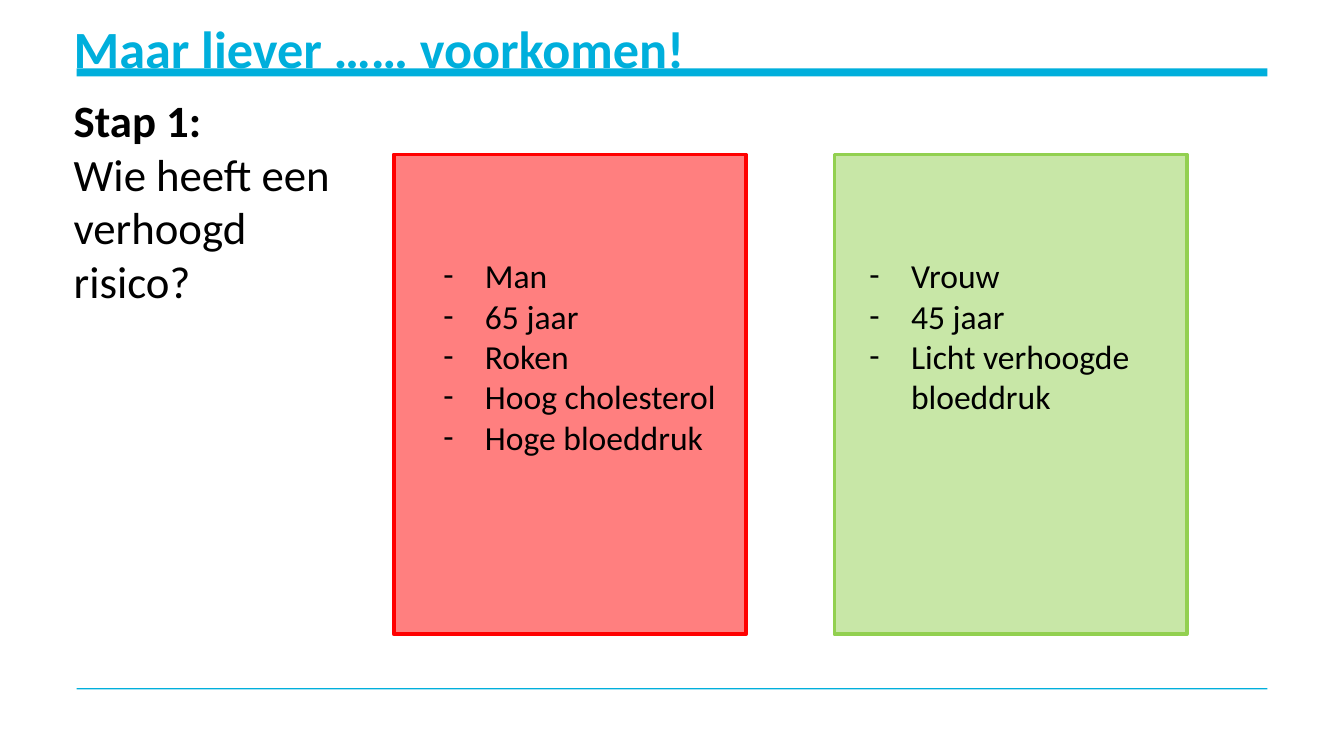
from lxml import etree
from pptx import Presentation
from pptx import util as u
from pptx.dml.color import RGBColor
from pptx.enum import shapes, text
from pptx.oxml import ns

BLUE, BLACK, RED, GREEN = "00AFDC", "000000", "FF0000", "92D050"
FONT = "Calibri"


def add_rectangle(left, top, width, height, color, outlined=False):
    """Add a solid bar, or a half-transparent panel with an outline."""
    shape = slide.shapes.add_shape(
        shapes.MSO_SHAPE.RECTANGLE, *map(u.Inches, (left, top, width, height)))
    shape.shadow.inherit = False
    shape.fill.solid()
    shape.fill.fore_color.rgb = RGBColor.from_string(color)
    if outlined:
        shape.line.color.rgb = RGBColor.from_string(color)
        shape.line.width = u.Pt(2)
        fill_color = shape.fill._xPr.find(".//" + ns.qn("a:srgbClr"))
        etree.SubElement(fill_color, ns.qn("a:alpha"), val="50000")
    else:
        shape.line.fill.background()


def add_text(left, top, width, height, lines, size, color=BLACK,
             bold_first=False, bulleted=False):
    box = slide.shapes.add_textbox(*map(u.Inches, (left, top, width, height)))
    frame = box.text_frame
    frame.word_wrap = True
    frame.auto_size = text.MSO_AUTO_SIZE.SHAPE_TO_FIT_TEXT
    frame.text = "\n".join(lines)
    for index, paragraph in enumerate(frame.paragraphs):
        if bulleted:
            properties = paragraph._p.get_or_add_pPr()
            indent = u.Inches(0.31)
            properties.set("marL", str(indent))
            properties.set("indent", str(-indent))
            etree.SubElement(properties, ns.qn("a:buFont"), typeface=FONT)
            etree.SubElement(properties, ns.qn("a:buChar"), char="-")
        font = paragraph.runs[0].font
        font_format = {"name": FONT, "size": u.Pt(size),
                       "bold": bold_first and index == 0}
        for name, value in font_format.items():
            setattr(font, name, value)
        font.color.rgb = RGBColor.from_string(color)


presentation = Presentation()
presentation.slide_width = u.Inches(10)
presentation.slide_height = u.Inches(10 * 9 / 16)
slide = presentation.slides.add_slide(presentation.slide_layouts[6])

# Header and footer rules
for top, height in ((0.51, 0.06), (5.12, 0.01)):
    add_rectangle(0.57, top, 8.86, height, BLUE)

# Title and question
add_text(0.45, 0.07, 6.35, 0.57, ["Maar liever …… voorkomen!"], 28, BLUE,
         bold_first=True)
add_text(0.45, 0.64, 2.33, 1.72, ["Stap 1:", "Wie heeft een verhoogd risico?"],
         24, bold_first=True)

# Risk profiles: panel left, color, list left, list height, characteristics
profiles = (
    (2.93, RED, 3.2, 1.92,
     ["Man", "65 jaar", "Roken", "Hoog cholesterol", "Hoge bloeddruk"]),
    (6.21, GREEN, 6.37, 1.62,
     ["Vrouw", "45 jaar", "Licht verhoogde bloeddruk"]),
)
for panel_left, color, *_ in profiles:
    add_rectangle(panel_left, 1.15, 2.62, 3.57, color, outlined=True)
for *_, list_left, list_height, characteristics in profiles:
    add_text(list_left, 1.85, 2.29, list_height, characteristics, 18,
             bulleted=True)

presentation.save("out.pptx")
